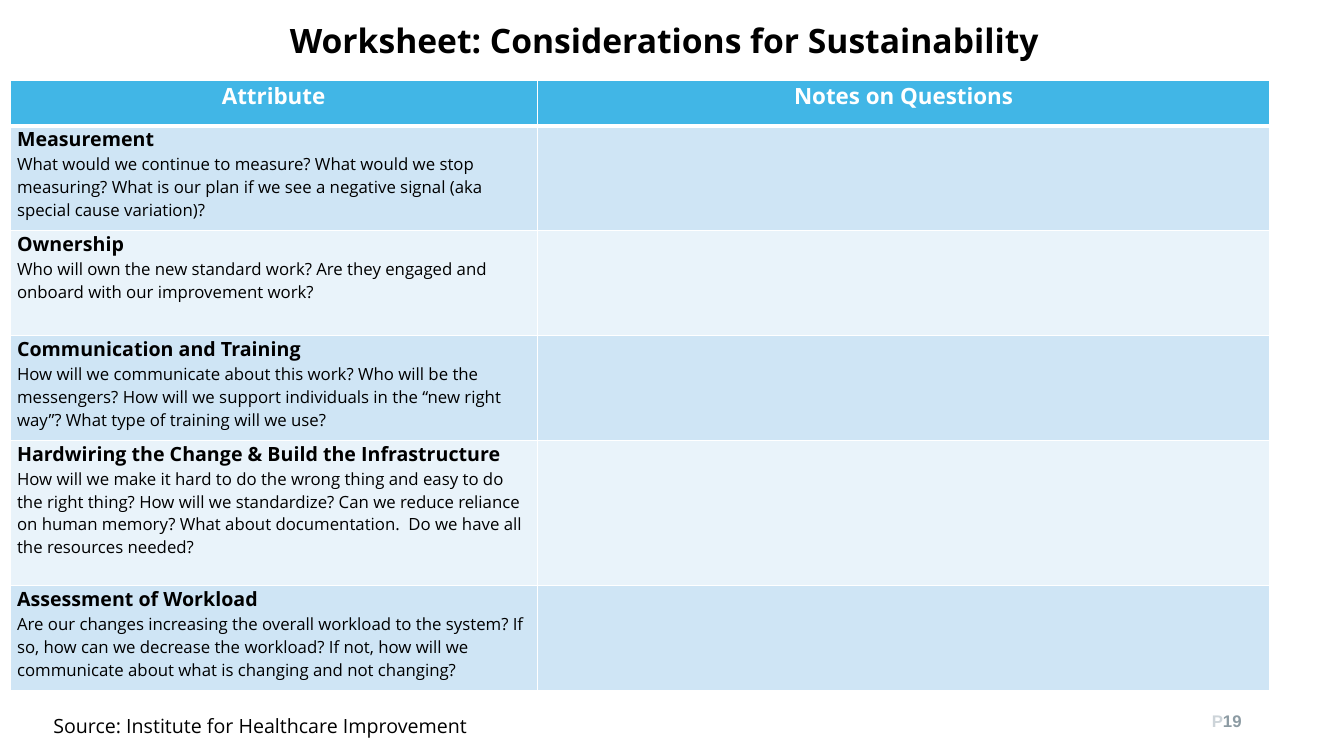
from pptx import Presentation
from pptx.dml.color import RGBColor
from pptx.enum.text import MSO_ANCHOR, PP_ALIGN
from pptx.oxml import parse_xml
from pptx.oxml.ns import nsdecls
from pptx.util import Pt

LEFT, CENTER, RIGHT = PP_ALIGN.LEFT, PP_ALIGN.CENTER, PP_ALIGN.RIGHT
TOP, MIDDLE = MSO_ANCHOR.TOP, MSO_ANCHOR.MIDDLE

COLORS = {
    "white": "FFFFFF",
    "black": "000000",
    "header": "41B6E6",
    "band_dark": "CFE5F5",
    "band_light": "E9F3FA",
    "page_letter": "CDD4D9",
    "page_number": "8C9BA3",
}

FORMATS = {
    "title": {"name": "Open Sans", "size": Pt(24), "bold": True},
    "header": {"name": "Open Sans", "size": Pt(16), "bold": True},
    "attribute": {"name": "Open Sans", "size": Pt(14), "bold": True},
    "questions": {"name": "Open Sans", "size": Pt(12), "bold": False},
    "source": {"name": "Open Sans", "size": Pt(14), "bold": False},
    "page": {"name": "Arial", "size": Pt(12), "bold": True},
}

HEADERS = ["Attribute", "Notes on Questions"]
COLUMN_WIDTHS = [376.5, 523.5]
HEADER_HEIGHT = 32.4
ATTRIBUTES = [
    ("Measurement", 74.9,
     "What would we continue to measure? What would we stop measuring? "
     "What is our plan if we see a negative signal (aka special cause variation)?"),
    ("Ownership", 74.9,
     "Who will own the new standard work? Are they engaged and onboard "
     "with our improvement work?"),
    ("Communication and Training", 74.9,
     "How will we communicate about this work? Who will be the messengers? "
     "How will we support individuals in the “new right way”? "
     "What type of training will we use?"),
    ("Hardwiring the Change & Build the Infrastructure", 103.7,
     "How will we make it hard to do the wrong thing and easy to do the right thing? "
     "How will we standardize? Can we reduce reliance on human memory? "
     "What about documentation.  Do we have all the resources needed?"),
    ("Assessment of Workload", 74.9,
     "Are our changes increasing the overall workload to the system? "
     "If so, how can we decrease the workload? If not, how will we communicate "
     "about what is changing and not changing?"),
]


def add_run(paragraph, text, style, color):
    run = paragraph.add_run()
    run.text = text
    for attribute, value in FORMATS[style].items():
        setattr(run.font, attribute, value)
    run.font.color.rgb = RGBColor.from_string(COLORS[color])


def add_text(slide, box, runs, alignment=LEFT, anchor=MIDDLE, wrap=True, line_spacing=None):
    shape = slide.shapes.add_textbox(*map(Pt, box))
    shape.text_frame.word_wrap = wrap
    shape.text_frame.vertical_anchor = anchor
    paragraph = shape.text_frame.paragraphs[0]
    paragraph.alignment = alignment
    paragraph.line_spacing = line_spacing
    for text, style, color in runs:
        add_run(paragraph, text, style, color)


def format_cell(cell, color, bottom_width=1):
    cell.margin_left = cell.margin_right = Pt(5)
    cell.margin_top = cell.margin_bottom = 0
    cell.fill.solid()
    cell.fill.fore_color.rgb = RGBColor.from_string(COLORS[color])
    properties = cell._tc.get_or_add_tcPr()
    widths = {"lnL": 1, "lnR": 1, "lnT": 1, "lnB": bottom_width}
    for index, (side, width) in enumerate(widths.items()):
        properties.insert(index, parse_xml(
            f'<a:{side} {nsdecls("a")} w="{Pt(width)}"><a:solidFill>'
            f'<a:srgbClr val="{COLORS["white"]}"/></a:solidFill></a:{side}>'))


def add_worksheet(slide, left, top):
    heights = [HEADER_HEIGHT] + [height for _, height, _ in ATTRIBUTES]
    box = (left, top, sum(COLUMN_WIDTHS), sum(heights))
    table = slide.shapes.add_table(
        len(heights), len(COLUMN_WIDTHS), *map(Pt, box)).table
    for column, width in zip(table.columns, COLUMN_WIDTHS):
        column.width = Pt(width)
    for row, height in zip(table.rows, heights):
        row.height = Pt(height)

    for column, header in enumerate(HEADERS):
        cell = table.cell(0, column)
        format_cell(cell, "header", bottom_width=3)
        paragraph = cell.text_frame.paragraphs[0]
        paragraph.alignment = CENTER
        add_run(paragraph, header, "header", "white")

    for row, (attribute, _, questions) in enumerate(ATTRIBUTES, start=1):
        band = "band_dark" if row % 2 else "band_light"
        for column in range(len(HEADERS)):
            format_cell(table.cell(row, column), band)
        text_frame = table.cell(row, 0).text_frame
        add_run(text_frame.paragraphs[0], attribute, "attribute", "black")
        add_run(text_frame.add_paragraph(), questions, "questions", "black")


def add_title(slide, box):
    add_text(slide, box,
             [("Worksheet: Considerations for Sustainability", "title", "black")],
             alignment=CENTER, line_spacing=0.9)


def add_footer(slide, left, top, width):
    add_text(slide, (left, top + 6, 313, 24.5),
             [("Source: Institute for Healthcare Improvement", "source", "black")],
             anchor=TOP, wrap=False)
    page_width = 216
    add_text(slide, (left + width - page_width, top, page_width, 28.8),
             [("P", "page", "page_letter"), ("19", "page", "page_number")],
             alignment=RIGHT)


def main():
    presentation = Presentation()
    presentation.slide_width = Pt(960)
    presentation.slide_height = Pt(540)
    slide = presentation.slides.add_slide(presentation.slide_layouts[6])
    add_worksheet(slide, 7.2, 57.6)
    add_title(slide, (120, 0.7, 709, 60))
    add_footer(slide, 31, 500.4, 863)
    presentation.save("out.pptx")


if __name__ == "__main__":
    main()
